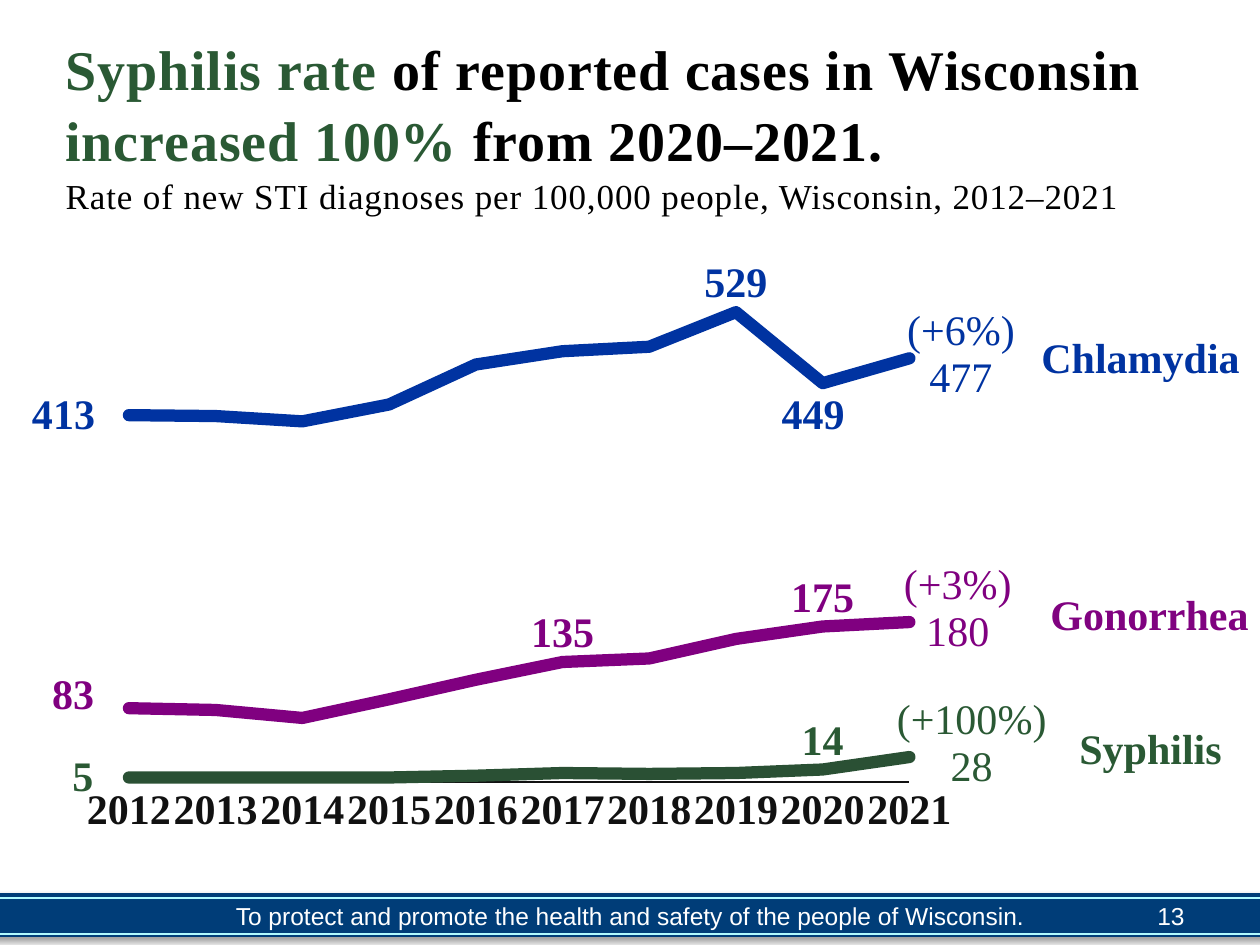
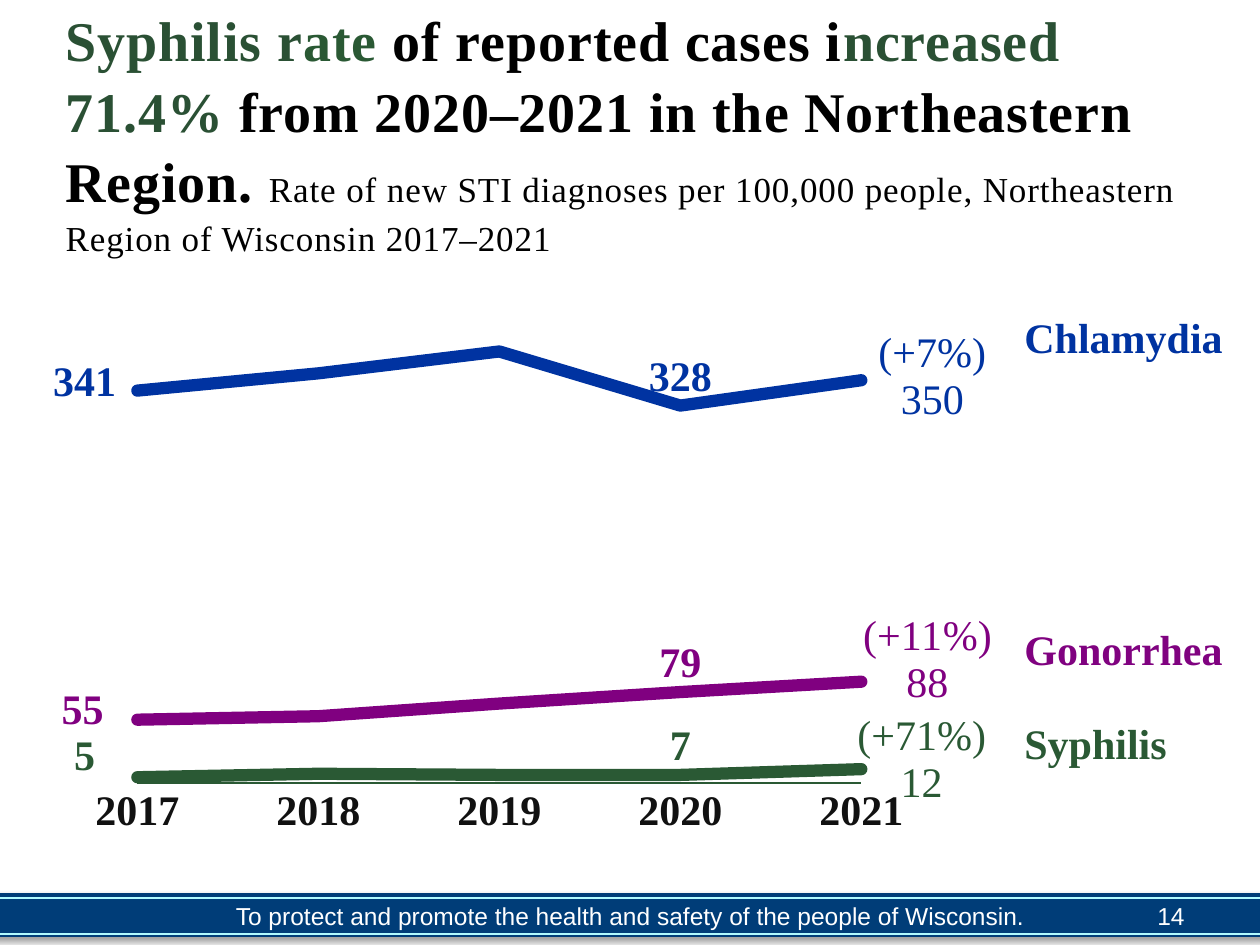
from lxml.etree import SubElement
from pptx import Presentation
from pptx.chart.data import CategoryChartData
from pptx.dml.color import RGBColor
from pptx.enum.chart import XL_CHART_TYPE, XL_LABEL_POSITION, XL_MARKER_STYLE, XL_TICK_MARK
from pptx.enum.shapes import MSO_CONNECTOR, MSO_SHAPE
from pptx.enum.text import MSO_ANCHOR, MSO_AUTO_SIZE, PP_ALIGN
from pptx.oxml import parse_xml
from pptx.oxml.ns import nsdecls, qn
from pptx.util import Pt

SCALE = 914400 / 126
SERIF = "Times New Roman"
SANS = "Arial"
BLUE = "0033A1"
PURPLE = "800080"
LABEL_PURPLE = "800280"
GREEN = "2A5934"
DARK_GREEN = "2A5034"
BLACK = "000000"
INK = "111111"
WHITE = "FFFFFF"
BAND = "003D78"
BAND_EDGE = "B0FAFF"
MOTTO = "To protect and promote the health and safety of the people of Wisconsin."


def px(length):
    return round(length * SCALE)


def color(value):
    return RGBColor.from_string(value)


def style_font(font, size, fill, bold=False, name=SERIF):
    font.size, font.bold, font.name = Pt(size), bold, name
    font.color.rgb = color(fill)


def write(para, text, size=24, fill=BLACK, bold=False, name=SERIF, spacing=0):
    span = para.add_run()
    span.text = text
    style_font(span.font, size, fill, bold, name)
    if spacing:
        span.font._element.set("spc", str(round(spacing * 100)))


def manual_layout(**values):
    settings = "".join(f'<c:{key} val="{value}"/>' for key, value in values.items())
    return parse_xml(f'<c:layout {nsdecls("c")}><c:manualLayout>{settings}</c:manualLayout></c:layout>')


class RatePage:
    def __init__(self, deck):
        self.deck = deck
        self.page = None

    def start(self, number):
        self.page = self.deck.slides.add_slide(self.deck.slide_layouts[5])
        self.band()
        self.text(MOTTO, -10, 903, 1281, 25, size=14, fill=WHITE, name=SANS,
                  align=PP_ALIGN.CENTER, anchor=MSO_ANCHOR.MIDDLE)
        self.text(str(number), 903, 891, 294, 50, size=14, fill=WHITE, name=SANS,
                  align=PP_ALIGN.RIGHT, anchor=MSO_ANCHOR.MIDDLE)

    def band(self):
        bar = self.page.shapes.add_shape(MSO_SHAPE.RECTANGLE, px(-13), px(893), px(1285), px(44))
        bar.shadow.inherit = False
        bar.fill.solid()
        bar.fill.fore_color.rgb = color(BAND)
        bar.line.fill.background()
        effects = bar._element.spPr.find(qn("a:effectLst"))
        effects.append(parse_xml(
            f'<a:outerShdw {nsdecls("a")} blurRad="50800" dist="38100" dir="2700000">'
            f'<a:srgbClr val="{BLACK}"><a:alpha val="40000"/></a:srgbClr></a:outerShdw>'))
        for top in (898, 934):
            self.line(-13, top, 1273, top)

    def line(self, left, top, right, bottom):
        edge = self.page.shapes.add_connector(
            MSO_CONNECTOR.STRAIGHT, px(left), px(top), px(right), px(bottom))
        edge.line.color.rgb = color(BAND_EDGE)
        edge.line.width = Pt(1.5)
        SubElement(edge._element.spPr, qn("a:effectLst"))

    def text(self, text, left, top, width, height, align=PP_ALIGN.LEFT,
             anchor=MSO_ANCHOR.TOP, **style):
        box = self.page.shapes.add_textbox(px(left), px(top), px(width), px(height))
        frame = box.text_frame
        frame.word_wrap = True
        frame.vertical_anchor = anchor
        para = frame.paragraphs[0]
        para.alignment = align
        write(para, text, **style)

    def title(self, headline, subtitle, top, height, new_line=False, bottom_inset=6):
        box = self.page.shapes.title
        box.left, box.top, box.width, box.height = px(53), px(top), px(1176), px(height)
        frame = box.text_frame
        frame.word_wrap = True
        frame.auto_size = MSO_AUTO_SIZE.NONE
        frame.vertical_anchor = MSO_ANCHOR.MIDDLE
        frame.margin_bottom = px(bottom_inset)
        para = frame.paragraphs[0]
        para.alignment = PP_ALIGN.LEFT
        para.line_spacing = 1.05
        for text, fill in headline:
            write(para, text, size=32, fill=fill, bold=True, spacing=0.5)
        if new_line:
            para.add_line_break()
        write(para, subtitle, size=20, spacing=0.5)

    def disease_names(self, places):
        names = (("Chlamydia", BLUE), ("Gonorrhea", LABEL_PURPLE), ("Syphilis", GREEN))
        for (name, fill), (left, top, width) in zip(names, places):
            self.text(name, left, top, width, 63, fill=fill, bold=True)

    def chart(self, place, plot_area, years, rates, line_colors, labels, top_rate, axis_color, axis_width):
        data = CategoryChartData()
        data.categories = [str(year) for year in years]
        for number, values in enumerate(rates, 1):
            data.add_series(f"Series {number}", values)
        chart = self.page.shapes.add_chart(XL_CHART_TYPE.LINE, *map(px, place), data).chart
        chart.has_title = chart.has_legend = False
        style_font(chart.font, 10, INK, name=SANS)
        self.axes(chart, top_rate, axis_color, axis_width)
        self.plot_area(chart, plot_area)
        for series, line_color, label_color, points in zip(
                chart.plots[0].series, line_colors, (BLUE, PURPLE, GREEN), labels):
            series.smooth = False
            series.marker.style = XL_MARKER_STYLE.NONE
            series.format.line.color.rgb = color(line_color)
            series.format.line.width = Pt(7)
            series._element.find(qn("c:spPr")).find(qn("a:ln")).set("cap", "rnd")
            self.point_labels(series, points, label_color, place)

    def axes(self, chart, top_rate, axis_color, axis_width):
        rate_axis, year_axis = chart.value_axis, chart.category_axis
        rate_axis.minimum_scale, rate_axis.maximum_scale = 0, top_rate
        rate_axis.has_major_gridlines = False
        rate_axis.visible = False
        SubElement(rate_axis._element, qn("c:crossBetween")).set("val", "midCat")
        year_axis.major_tick_mark = year_axis.minor_tick_mark = XL_TICK_MARK.NONE
        style_font(year_axis.tick_labels.font, 24, INK, bold=True)
        year_axis.format.line.color.rgb = color(axis_color)
        year_axis.format.line.width = Pt(axis_width)

    def plot_area(self, chart, area):
        plot = chart._chartSpace.chart.plotArea
        for layout in plot.findall(qn("c:layout")):
            plot.remove(layout)
        left, top, width, height = area
        plot.insert(0, manual_layout(layoutTarget="inner", xMode="edge", yMode="edge",
                                     x=left, y=top, w=width, h=height))

    def point_labels(self, series, points, fill, place):
        all_labels = series.data_labels
        all_labels.show_value = False
        for leader in all_labels._element.findall(qn("c:showLeaderLines")):
            leader.set("val", "0")
        for index, (right, down, change) in points.items():
            label = series.points[index].data_label
            if change:
                frame = label.text_frame
                write(frame.paragraphs[0], change, fill=fill)
                write(frame.add_paragraph(), str(series.values[index]).removesuffix(".0"), fill=fill)
            else:
                style_font(label.font, 24, fill, bold=True)
            label.position = XL_LABEL_POSITION.ABOVE
            if right or down:
                element = next(item for item in all_labels._element.findall(qn("c:dLbl"))
                               if item.find(qn("c:idx")).get("val") == str(index))
                element.insert(1, manual_layout(x=round(right / place[2], 3), y=round(down / place[3], 3)))


def state_page(rate_page):
    rate_page.start(13)
    rate_page.title(
        [("Syphilis rate ", GREEN), ("of reported cases in Wisconsin ", BLACK),
         ("increased 100% ", GREEN), ("from 2020–2021.", BLACK)],
        "Rate of new STI diagnoses per 100,000 people, Wisconsin, 2012–2021",
        top=29, height=190, new_line=True)
    rate_page.chart(
        (32, 224, 1074, 627), (0.09, 0.04, 0.727, 0.85), range(2012, 2022),
        [(413, 412, 406, 425, 470, 485, 490, 529, 449, 477),
         (83, 81, 72, 93, 115, 135, 139, 161, 175, 180),
         (5, 5, 5, 5, 7, 10, 9, 10, 14, 28)],
        (BLUE, PURPLE, DARK_GREEN),
        [{0: (-66, 28, ""), 7: (0, 0, ""), 8: (-10, 61, ""), 9: (52, 49, "(+6%)")},
         {0: (-56, 15, ""), 5: (0, 0, ""), 8: (0, 0, ""), 9: (48, 39, "(+3%)")},
         {0: (-46, 28, ""), 8: (0, 0, ""), 9: (62, 39, "(+100%)")}],
        top_rate=600, axis_color=INK, axis_width=1)
    rate_page.disease_names([(1029, 325, 232), (1038, 582, 249), (1067, 716, 190)])


def region_page(rate_page):
    rate_page.start(14)
    rate_page.title(
        [("Syphilis r", DARK_GREEN), ("ate", GREEN), (" of reported cases i", BLACK),
         ("ncreased 71.4% ", DARK_GREEN),
         ("from 2020–2021 in the Northeastern Region. ", BLACK)],
        "Rate of new STI diagnoses per 100,000 people, Northeastern Region of Wisconsin 2017–2021",
        top=53, height=194, bottom_inset=46)
    rate_page.chart(
        (53, 305, 959, 556), (0.088, 0.032, 0.755, 0.828), range(2017, 2022),
        [(341, 356, 375, 328, 350), (55, 58, 69, 79, 88), (5, 8, 7, 7, 12)],
        (BLUE, PURPLE, GREEN),
        [{0: (-53, 20, ""), 3: (0, 0, ""), 4: (71, 49, "(+7%)")},
         {0: (-55, 19, ""), 3: (0, 0, ""), 4: (66, 30, "(+11%)")},
         {0: (-53, 8, ""), 3: (0, 0, ""), 4: (60, 43, "(+71%)")}],
        top_rate=400, axis_color=GREEN, axis_width=0.75)
    rate_page.disease_names([(1012, 305, 249), (1012, 617, 228), (1012, 711, 179)])


def main():
    deck = Presentation()
    deck.slide_width, deck.slide_height = px(1260), px(945)
    rate_page = RatePage(deck)
    state_page(rate_page)
    region_page(rate_page)
    deck.save("out.pptx")


if __name__ == "__main__":
    main()
